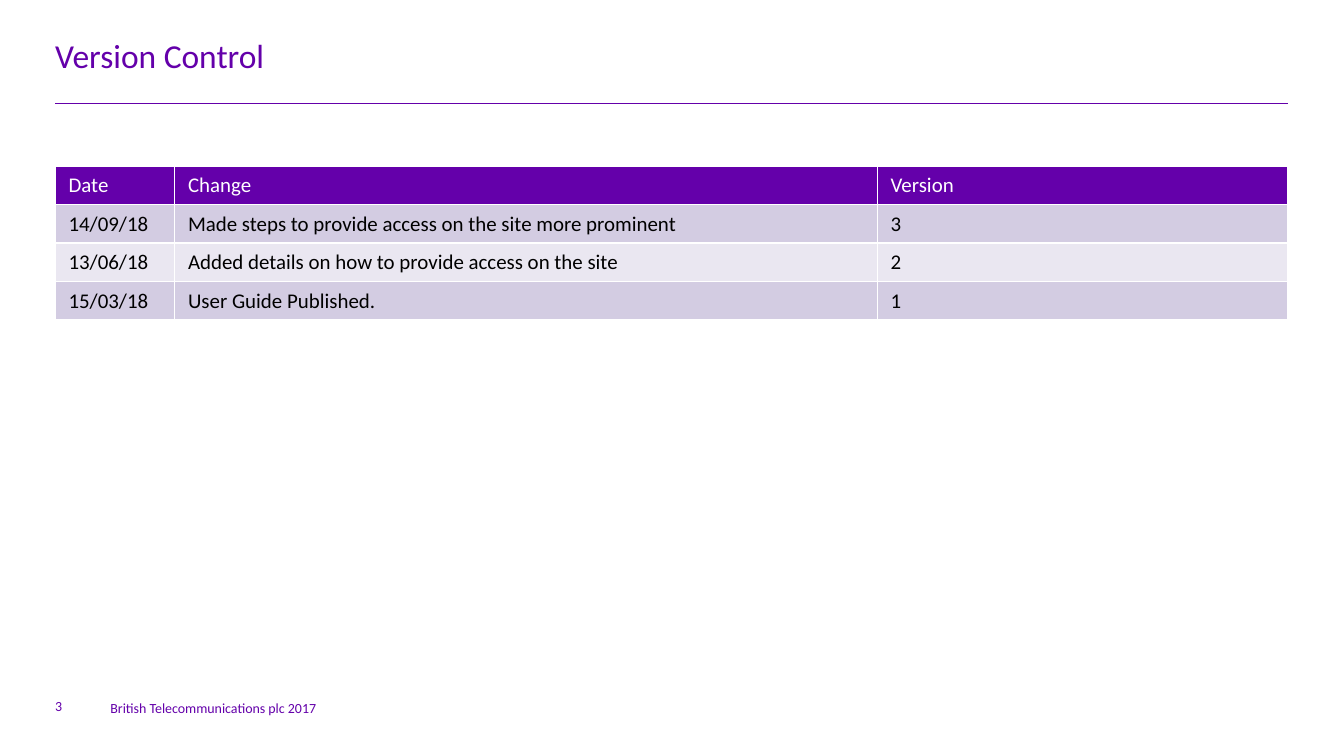
import pptx
import pptx.util
import pptx.dml.color
import pptx.enum.shapes
import pptx.enum.text
import pptx.oxml
import pptx.oxml.ns

Pt = pptx.util.Pt
ANCHOR = pptx.enum.text.MSO_ANCHOR

COLORS = {
    "purple": "6400AA",
    "white": "FFFFFF",
    "black": "000000",
    "band_dark": "D3CCE2",
    "band_light": "EAE7F1",
}
FONT = "Calibri"
LEFT, WIDTH = 39.6, 884.2

COLUMN_WIDTHS = (85.7, 504, 294.5)
ROW_HEIGHT = 27.5
VERSIONS = (
    ("Date", "Change", "Version"),
    ("14/09/18", "Made steps to provide access on the site more prominent", "3"),
    ("13/06/18", "Added details on how to provide access on the site", "2"),
    ("15/03/18", "User Guide Published.", "1"),
)


def rgb(name):
    return pptx.dml.color.RGBColor.from_string(COLORS[name])


def write_text(tf, text, size=10, color="purple"):
    p = tf.paragraphs[0]
    r = p.add_run()
    r.text = text
    r.font.name = FONT
    r.font.size = Pt(size)
    r.font.bold = False
    r.font.color.rgb = rgb(color)


def add_text(slide, text, left, top, width, height, anchor=ANCHOR.TOP, **fmt):
    sp = slide.shapes.add_textbox(Pt(left), Pt(top), Pt(width), Pt(height))
    tf = sp.text_frame
    tf.word_wrap = True
    tf.margin_left = tf.margin_right = tf.margin_top = tf.margin_bottom = 0
    tf.vertical_anchor = anchor
    write_text(tf, text, **fmt)


def add_rule(slide, left, top, width):
    line = slide.shapes.add_connector(
        pptx.enum.shapes.MSO_CONNECTOR.STRAIGHT,
        Pt(left), Pt(top), Pt(left + width), Pt(top))
    line.line.color.rgb = rgb("purple")
    line.line.width = Pt(0.25)
    line._element.spPr.append(pptx.oxml.parse_xml(
        f"<a:effectLst {pptx.oxml.ns.nsdecls('a')}/>"))


def set_borders(cell, color, width):
    # Borders come before the fill in the cell properties
    tcPr = cell._tc.get_or_add_tcPr()
    for i, side in enumerate(("lnL", "lnR", "lnT", "lnB")):
        tcPr.insert(i, pptx.oxml.parse_xml(
            f'<a:{side} {pptx.oxml.ns.nsdecls("a")} w="{Pt(width)}">'
            f'<a:solidFill><a:srgbClr val="{COLORS[color]}"/></a:solidFill>'
            f'</a:{side}>'))


def style_cell(cell, text, fill, color):
    cell.margin_left = cell.margin_right = Pt(9.6)
    cell.margin_top = cell.margin_bottom = Pt(4.8)
    cell.fill.solid()
    cell.fill.fore_color.rgb = rgb(fill)
    set_borders(cell, "white", 1)
    write_text(cell.text_frame, text, size=15, color=color)


def add_version_table(slide, left, top):
    table = slide.shapes.add_table(
        len(VERSIONS), len(COLUMN_WIDTHS), Pt(left), Pt(top),
        Pt(sum(COLUMN_WIDTHS)), Pt(ROW_HEIGHT * len(VERSIONS))).table
    for column, width in zip(table.columns, COLUMN_WIDTHS):
        column.width = Pt(width)
    for i, values in enumerate(VERSIONS):
        table.rows[i].height = Pt(ROW_HEIGHT)
        if i == 0:
            fill, color = "purple", "white"
        else:
            fill, color = ("band_dark" if i % 2 else "band_light"), "black"
        for j, text in enumerate(values):
            style_cell(table.cell(i, j), text, fill, color)


def main():
    prs = pptx.Presentation()
    prs.slide_width, prs.slide_height = Pt(964), Pt(538.6)
    s = prs.slides.add_slide(prs.slide_layouts[6])

    # Heading
    add_rule(s, LEFT, 73.8, WIDTH)
    add_text(s, "Version Control", LEFT, 25.2, WIDTH, 33.8, size=24)

    # Change history
    add_version_table(s, LEFT, 119)

    # Footer
    add_text(s, "3", LEFT, 490.3, 28, 22.3, anchor=ANCHOR.BOTTOM)
    add_text(s, "British Telecommunications plc 2017", 79.2, 492.5, 170, 20.9,
             anchor=ANCHOR.BOTTOM)

    prs.save("out.pptx")


if __name__ == "__main__":
    main()
